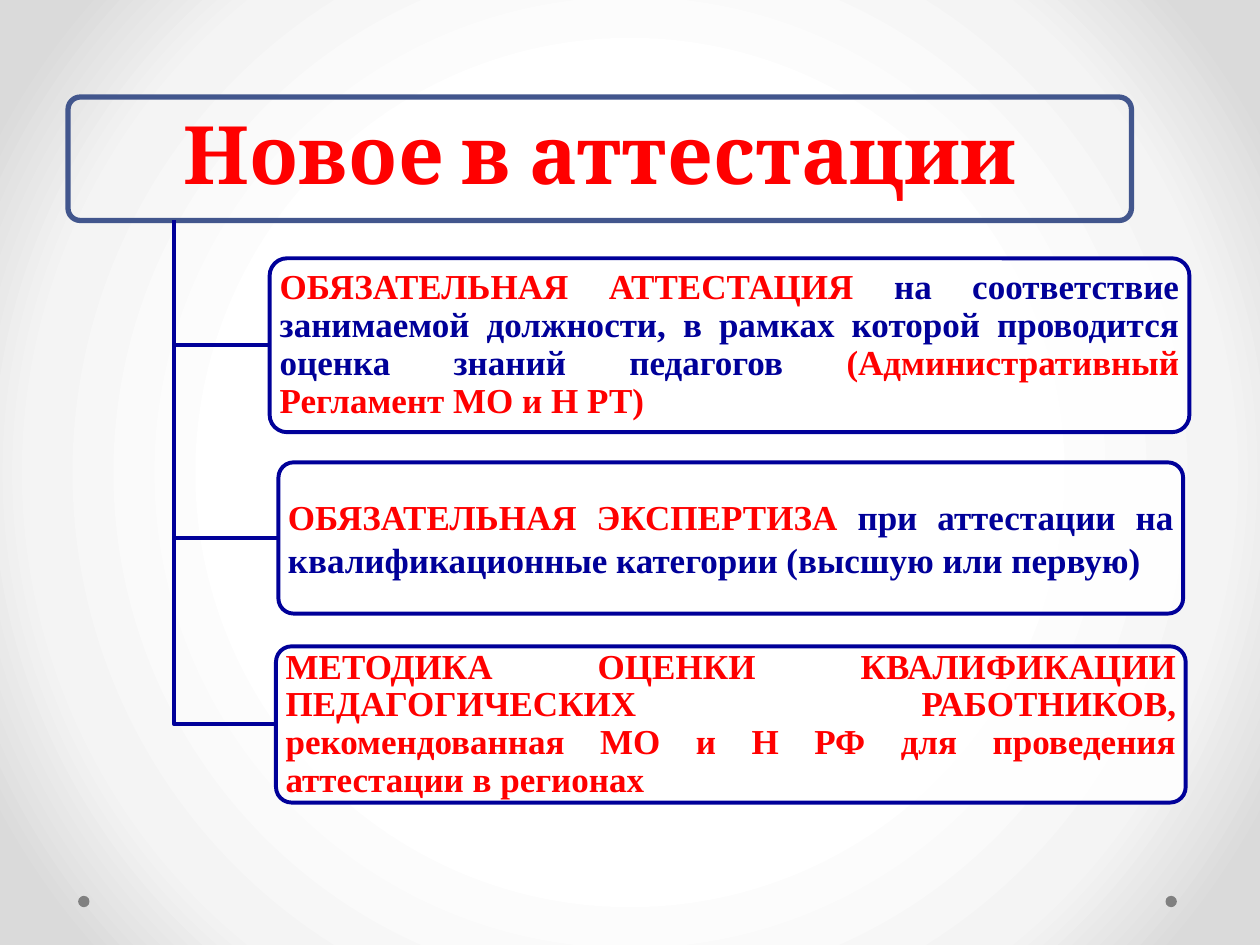
from lxml.etree import SubElement
from pptx import Presentation
from pptx.dml.color import RGBColor
from pptx.enum.shapes import MSO_SHAPE
from pptx.enum.text import MSO_ANCHOR, PP_ALIGN
from pptx.oxml.ns import qn
from pptx.util import Inches, Pt

COLORS = {"red": "FF0000", "navy": "000099", "frame": "42568D", "white": "FFFFFF",
          "light": "F4F4F4", "edge": "DADADA", "dot": "808080"}
BACKGROUND_STOPS = [(50, "white"), (76, "light"), (92, "edge")]
TITLE = {
    "box": (0.54, 0.77, 8.44, 0.98),
    "runs": [("Новое в аттестации", "red")],
    "spacing": 0.9,
}
ITEMS = [
    {"box": (2.14, 2.05, 7.3, 1.38), "spacing": 0.9, "runs": [
        ("ОБЯЗАТЕЛЬНАЯ АТТЕСТАЦИЯ ", "red"),
        ("на соответствие занимаемой должности, в рамках которой "
         "проводится оценка знаний педагогов ", "navy"),
        ("(Административный Регламент МО и Н РТ)", "red")]},
    {"box": (2.21, 3.67, 7.18, 1.2), "spacing": 1.0, "runs": [
        ("ОБЯЗАТЕЛЬНАЯ ЭКСПЕРТИЗА ", "red"),
        ("при аттестации на квалификационные категории "
         "(высшую или первую)", "navy")]},
    {"box": (2.19, 5.13, 7.22, 1.24), "spacing": 0.9, "runs": [
        ("МЕТОДИКА ОЦЕНКИ КВАЛИФИКАЦИИ ПЕДАГОГИЧЕСКИХ РАБОТНИКОВ, "
         "рекомендованная МО и Н РФ для проведения аттестации в регионах", "red")]},
]
TITLE_STYLE = {"font": {"name": "Cambria", "size": Pt(46), "bold": True},
               "align": PP_ALIGN.CENTER, "margins": (0.1, 0.06),
               "line": "frame", "width": 3, "filled": False}
ITEM_STYLE = {"font": {"name": "Times New Roman", "size": Pt(20), "bold": True},
              "align": PP_ALIGN.JUSTIFY, "margins": (0.04, 0.03),
              "line": "navy", "width": 2.25, "filled": True}
DOT_LEFTS, DOT_TOP, DOT_SIZE = (9.25, 0.62), 7.11, 0.09


def color(name):
    return RGBColor.from_string(COLORS[name])


def set_values(target, values):
    for name, value in values.items():
        setattr(target, name, value)


def set_line(shape, name, width):
    shape.line.color.rgb = color(name)
    shape.line.width = Pt(width)
    shape.shadow.inherit = False


def paint_background(slide):
    slide.background.fill.gradient()
    gradient = slide.background._cSld.find(".//" + qn("a:gradFill"))
    for child in list(gradient):
        gradient.remove(child)
    stops = SubElement(gradient, qn("a:gsLst"))
    for position, name in BACKGROUND_STOPS:
        stop = SubElement(stops, qn("a:gs"), pos=str(position * 1000))
        SubElement(stop, qn("a:srgbClr"), val=COLORS[name])
    circle = SubElement(gradient, qn("a:path"), path="circle")
    SubElement(circle, qn("a:fillToRect"), l="50000", t="50000", r="50000", b="50000")


def add_dot(slide, left):
    dot = slide.shapes.add_shape(
        MSO_SHAPE.OVAL, *map(Inches, (left, DOT_TOP, DOT_SIZE, DOT_SIZE)))
    dot.fill.solid()
    dot.fill.fore_color.rgb = color("dot")
    dot.line.fill.background()
    dot.shadow.inherit = False


def add_box(slide, content, style):
    shape = slide.shapes.add_shape(
        MSO_SHAPE.ROUNDED_RECTANGLE, *map(Inches, content["box"]))
    shape.adjustments[0] = 0.1
    set_line(shape, style["line"], style["width"])
    if style["filled"]:
        shape.fill.solid()
        shape.fill.fore_color.rgb = color("white")
        fill_color = shape._element.spPr.find(qn("a:solidFill"))[0]
        SubElement(fill_color, qn("a:alpha"), val="90000")
    else:
        shape.fill.background()
    across, down = map(Inches, style["margins"])
    set_values(shape.text_frame, {
        "word_wrap": True, "vertical_anchor": MSO_ANCHOR.MIDDLE,
        "margin_left": across, "margin_right": across,
        "margin_top": down, "margin_bottom": down})
    paragraph = shape.text_frame.paragraphs[0]
    set_values(paragraph, {"alignment": style["align"],
                           "line_spacing": content["spacing"]})
    for text, name in content["runs"]:
        run = paragraph.add_run()
        run.text = text
        set_values(run.font, style["font"])
        run.font.color.rgb = color(name)


def add_branch(slide, item):
    title_left, title_top, title_width, title_height = TITLE["box"]
    left, top, width, height = item["box"]
    trunk = title_left + title_width / 10
    start = title_top + title_height
    middle = top + height / 2
    builder = slide.shapes.build_freeform(Inches(trunk), Inches(start))
    builder.add_line_segments(
        [(Inches(trunk), Inches(middle)), (Inches(left), Inches(middle))], close=False)
    branch = builder.convert_to_shape()
    branch.fill.background()
    set_line(branch, "navy", 2.25)


def main():
    presentation = Presentation()
    set_values(presentation, {"slide_width": Inches(10), "slide_height": Inches(7.5)})
    slide = presentation.slides.add_slide(presentation.slide_layouts[6])
    paint_background(slide)
    for left in DOT_LEFTS:
        add_dot(slide, left)
    add_box(slide, TITLE, TITLE_STYLE)
    for item in ITEMS:
        add_branch(slide, item)
        add_box(slide, item, ITEM_STYLE)
    presentation.save("out.pptx")


if __name__ == "__main__":
    main()
